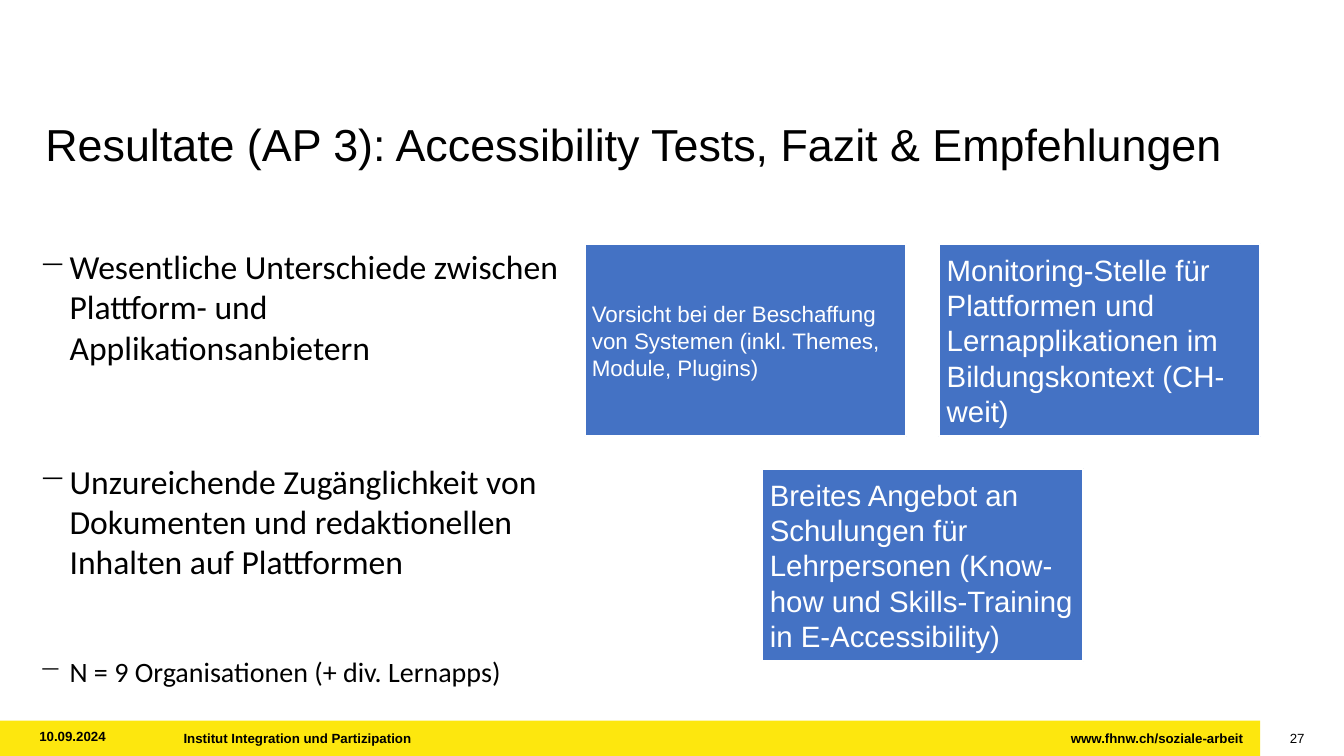
from dataclasses import dataclass
from typing import Any

from lxml.etree import SubElement
from pptx import Presentation
from pptx.dml.color import RGBColor
from pptx.enum.shapes import MSO_SHAPE
from pptx.enum.text import MSO_ANCHOR, MSO_AUTO_SIZE, PP_ALIGN
from pptx.oxml.ns import qn
from pptx.shapes.autoshape import Shape
from pptx.slide import Slide
from pptx.text.text import TextFrame
from pptx.util import Inches, Pt

SLIDE_WIDTH, SLIDE_HEIGHT = Inches(13.33), Inches(7.5)
COLUMN, ROW = SLIDE_WIDTH / 133.3, SLIDE_HEIGHT / 75


@dataclass(frozen=True)
class Theme:
    black: RGBColor = RGBColor(0x00, 0x00, 0x00)
    white: RGBColor = RGBColor(0xFF, 0xFF, 0xFF)
    yellow: RGBColor = RGBColor(0xFD, 0xE7, 0x0E)
    blue: RGBColor = RGBColor(0x44, 0x72, 0xC4)
    heading_font: str = "Arial"
    body_font: str = "Calibri"
    title_size: float = 32
    finding_size: float = 24
    sample_size: float = 20
    card_size: float = 21
    small_card_size: float = 16
    footer_size: float = 9.5


THEME = Theme()


@dataclass(frozen=True)
class Area:
    """A place on the slide, in grid columns and rows."""
    column: float
    row: float
    columns: float
    rows: float

    def box(self) -> tuple[int, int, int, int]:
        return (round(self.column * COLUMN), round(self.row * ROW),
                round(self.columns * COLUMN), round(self.rows * ROW))


@dataclass(frozen=True)
class Finding:
    text: str
    size: float
    gap_before: float


@dataclass(frozen=True)
class Recommendation:
    text: str
    across: float
    down: int
    size: float
    inset: float


@dataclass(frozen=True)
class FooterItem:
    text: str
    column: float
    columns: float
    align: PP_ALIGN = PP_ALIGN.LEFT
    bold: bool = True
    line_spacing: float = 1.0


TITLE = "Resultate (AP 3): Accessibility Tests, Fazit & Empfehlungen"
TITLE_AREA = Area(4.5, 11.6, 120.4, 5.4)
FINDINGS_AREA = Area(3.9, 24.4, 52.1, 40.7)
FOOTER_BAND = Area(0, 71.5, 125, 3.5)
FOOTER_ROW, FOOTER_ROWS = 72.4, 1.6
FIRST_CARD = Area(58, 24.2, 31.9, 19.1)
CARD_GAP = 3.2
HANGING_INDENT = Inches(0.3)

FINDINGS = (
    Finding("Wesentliche Unterschiede zwischen Plattform- und Applikationsanbietern",
            THEME.finding_size, 0),
    Finding("Unzureichende Zugänglichkeit von Dokumenten und redaktionellen Inhalten auf Plattformen",
            THEME.finding_size, 67),
    Finding("N = 9 Organisationen (+ div. Lernapps)", THEME.sample_size, 52),
)
RECOMMENDATIONS = (
    Recommendation("Vorsicht bei der Beschaffung von Systemen (inkl. Themes, Module, Plugins)",
                   0, 0, THEME.small_card_size, 0.07),
    Recommendation("Monitoring-Stelle für Plattformen und Lernapplikationen im Bildungskontext (CH-weit)",
                   1, 0, THEME.card_size, 0.08),
    Recommendation("Breites Angebot an Schulungen für Lehrpersonen (Know-how und Skills-Training "
                   "in E-Accessibility)", 0.5, 1, THEME.card_size, 0.08),
)
FOOTER = (
    FooterItem("10.09.2024", 3.9, 13, line_spacing=0.9),
    FooterItem("Institut Integration und Partizipation", 18.2, 86.2),
    FooterItem("www.fhnw.ch/soziale-arbeit", 104.5, 18.8, PP_ALIGN.RIGHT),
    FooterItem("27", 125.3, 4.1, PP_ALIGN.RIGHT, bold=False),
)


def apply(target: Any, values: dict[str, Any]) -> None:
    for name, value in values.items():
        setattr(target, name, value)


def set_font(font: Any, size: float, color: RGBColor,
             name: str = THEME.heading_font, bold: bool = False) -> None:
    apply(font, {"size": Pt(size), "name": name, "bold": bold})
    font.color.rgb = color


def set_frame(frame: TextFrame, inset: float = 0,
              anchor: MSO_ANCHOR = MSO_ANCHOR.TOP) -> None:
    margin = Inches(inset)
    apply(frame, {"word_wrap": True, "auto_size": MSO_AUTO_SIZE.NONE, "vertical_anchor": anchor,
                  "margin_left": margin, "margin_right": margin,
                  "margin_top": margin, "margin_bottom": margin})


def add_block(slide: Slide, area: Area, color: RGBColor) -> Shape:
    block = slide.shapes.add_shape(MSO_SHAPE.RECTANGLE, *area.box())
    block.shadow.inherit = False
    block.fill.solid()
    block.fill.fore_color.rgb = color
    block.line.fill.background()
    return block


def add_title(slide: Slide) -> None:
    title = slide.shapes.title
    apply(title, dict(zip(("left", "top", "width", "height"), TITLE_AREA.box())))
    set_frame(title.text_frame)
    title.text_frame.text = TITLE
    heading = title.text_frame.paragraphs[0]
    heading.alignment = PP_ALIGN.LEFT
    set_font(heading.font, THEME.title_size, THEME.black)


def add_findings(slide: Slide) -> None:
    frame = slide.shapes.add_textbox(*FINDINGS_AREA.box()).text_frame
    set_frame(frame)
    for index, finding in enumerate(FINDINGS):
        paragraph = frame.add_paragraph() if index else frame.paragraphs[0]
        paragraph.text = finding.text
        paragraph.space_before = Pt(finding.gap_before)
        properties = paragraph._p.get_or_add_pPr()
        properties.set("marL", str(HANGING_INDENT))
        properties.set("indent", str(-HANGING_INDENT))
        SubElement(properties, qn("a:buChar"), char="−")
        set_font(paragraph.font, finding.size, THEME.black, THEME.body_font)


def add_recommendation(slide: Slide, item: Recommendation) -> None:
    area = Area(FIRST_CARD.column + item.across * (FIRST_CARD.columns + CARD_GAP),
                FIRST_CARD.row + item.down * (FIRST_CARD.rows + CARD_GAP),
                FIRST_CARD.columns, FIRST_CARD.rows)
    card = add_block(slide, area, THEME.blue)
    card.line.color.rgb = THEME.white
    card.line.width = Pt(1.5)
    set_frame(card.text_frame, item.inset, MSO_ANCHOR.MIDDLE)
    paragraph = card.text_frame.paragraphs[0]
    apply(paragraph, {"text": item.text, "alignment": PP_ALIGN.LEFT})
    set_font(paragraph.font, item.size, THEME.white)


def add_footer_item(slide: Slide, item: FooterItem) -> None:
    area = Area(item.column, FOOTER_ROW, item.columns, FOOTER_ROWS)
    frame = slide.shapes.add_textbox(*area.box()).text_frame
    set_frame(frame)
    paragraph = frame.paragraphs[0]
    apply(paragraph, {"text": item.text, "alignment": item.align,
                      "line_spacing": item.line_spacing})
    set_font(paragraph.font, THEME.footer_size, THEME.black, bold=item.bold)


def main() -> None:
    presentation = Presentation()
    apply(presentation, {"slide_width": SLIDE_WIDTH, "slide_height": SLIDE_HEIGHT})
    slide = presentation.slides.add_slide(presentation.slide_layouts.get_by_name("Title Only"))
    add_block(slide, FOOTER_BAND, THEME.yellow)
    add_title(slide)
    add_findings(slide)
    for recommendation in RECOMMENDATIONS:
        add_recommendation(slide, recommendation)
    for item in FOOTER:
        add_footer_item(slide, item)
    presentation.save("out.pptx")


if __name__ == "__main__":
    main()
